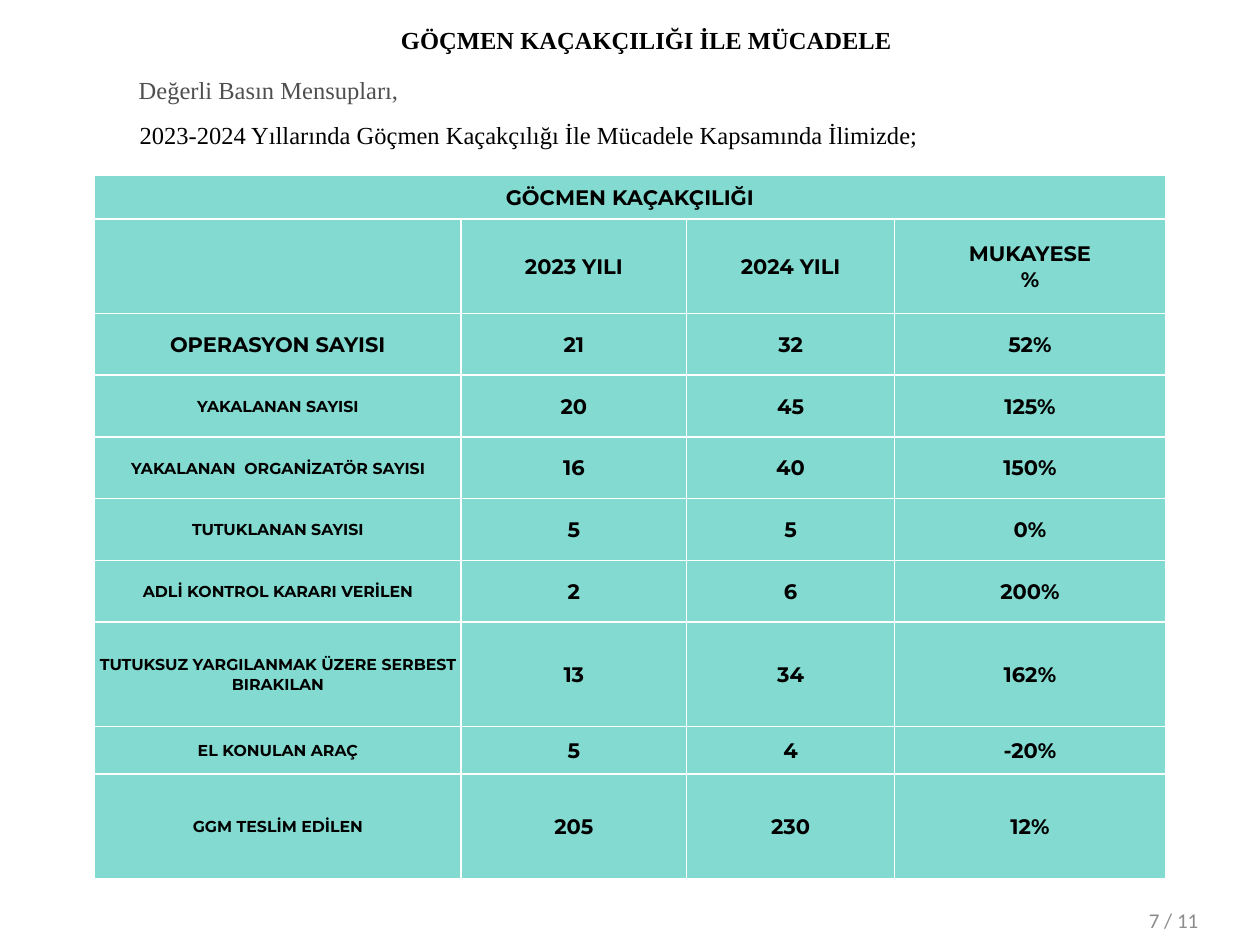
from lxml.etree import SubElement
from pptx import Presentation
from pptx.dml.color import RGBColor
from pptx.enum.text import MSO_ANCHOR, MSO_AUTO_SIZE, PP_ALIGN
from pptx.oxml.ns import qn
from pptx.util import Pt

TITLE = "GÖÇMEN KAÇAKÇILIĞI İLE MÜCADELE"
GREETING = "Değerli Basın Mensupları,"
LEAD = "2023-2024 Yıllarında Göçmen Kaçakçılığı İle Mücadele Kapsamında İlimizde;"
PAGE = "7 / 11"

ROWS = [
    ("GÖCMEN KAÇAKÇILIĞI", "", "", ""),
    ("", "2023 YILI", "2024 YILI", "MUKAYESE\n%"),
    ("OPERASYON SAYISI", "21", "32", "52%"),
    ("YAKALANAN SAYISI", "20", "45", "125%"),
    ("YAKALANAN  ORGANİZATÖR SAYISI", "16", "40", "150%"),
    ("TUTUKLANAN SAYISI", "5", "5", "0%"),
    ("ADLİ KONTROL KARARI VERİLEN", "2", "6", "200%"),
    ("TUTUKSUZ YARGILANMAK ÜZERE SERBEST BIRAKILAN", "13", "34", "162%"),
    ("EL KONULAN ARAÇ", "5", "4", "-20%"),
    ("GGM TESLİM EDİLEN", "205", "230", "12%"),
]
COL_WIDTHS = [209.5, 128.9, 118.8, 154.8]
ROW_HEIGHTS = [25, 54] + [35.3] * 5 + [59.6, 27.2, 59.6]
TABLE_LEFT, TABLE_TOP = 54, 100.1
FIRST_SMALL_LABEL_ROW = 3

THEME = {
    "serif": "Times New Roman", "table_font": "Montserrat", "page_font": "Calibri",
    "ink": "000000", "muted": "4F4F4F", "page": "8C8C8C",
    "cell": "82DAD0", "grid": "FFFFFF",
    "text_size": 14, "cell_size": 12, "label_size": 9, "page_size": 12,
}


def add_run(p, text, font, size, color, bold=False):
    r = p.add_run()
    r.text = text
    r.font.name = THEME[font]
    r.font.size = Pt(THEME[size])
    r.font.bold = bold
    r.font.color.rgb = RGBColor.from_string(THEME[color])


def place(sp, left, top, width, height):
    sp.left, sp.top, sp.width, sp.height = map(Pt, (left, top, width, height))
    tf = sp.text_frame
    tf.word_wrap = True
    tf.auto_size = MSO_AUTO_SIZE.NONE
    tf.vertical_anchor = MSO_ANCHOR.TOP
    return tf


def format_paragraph(p, align, margin, indent, after):
    p.alignment = align
    p.line_spacing = 1.07
    p.space_before = Pt(0)
    p.space_after = Pt(after)
    pPr = p._p.get_or_add_pPr()
    pPr.set("marL", str(Pt(margin)))
    pPr.set("indent", str(Pt(indent)))


def set_borders(cell):
    tcPr = cell._tc.get_or_add_tcPr()
    for i, side in enumerate(("a:lnL", "a:lnR", "a:lnT", "a:lnB")):
        ln = SubElement(tcPr, qn(side), w=str(Pt(1)))
        fill = SubElement(ln, qn("a:solidFill"))
        SubElement(fill, qn("a:srgbClr"), val=THEME["grid"])
        tcPr.insert(i, ln)


def fill_cell(cell, text, size):
    cell.fill.solid()
    cell.fill.fore_color.rgb = RGBColor.from_string(THEME["cell"])
    set_borders(cell)
    cell.vertical_anchor = MSO_ANCHOR.MIDDLE
    cell.margin_left = cell.margin_right = cell.margin_top = Pt(0.7)
    cell.margin_bottom = Pt(0)
    p = cell.text_frame.paragraphs[0]
    p.alignment = PP_ALIGN.CENTER
    for i, line in enumerate(text.split("\n") if text else []):
        if i:
            p.add_line_break()
        add_run(p, line, "table_font", size, "ink", True)


def add_heading(s):
    tf = place(s.shapes.title, 36.7, 9.4, 629.3, 28)
    p = tf.paragraphs[0]
    format_paragraph(p, PP_ALIGN.CENTER, 5, 31, 0)
    add_run(p, TITLE, "serif", "text_size", "ink", True)

    tf = place(s.shapes.add_textbox(0, 0, 0, 0), 36.7, 38.2, 629.3, 53)
    p = tf.paragraphs[0]
    format_paragraph(p, PP_ALIGN.JUSTIFY, 0, 35.5, 8)
    add_run(p, GREETING, "serif", "text_size", "muted")
    p = tf.add_paragraph()
    format_paragraph(p, PP_ALIGN.JUSTIFY, 5, 31, 0)
    add_run(p, LEAD, "serif", "text_size", "ink")


def add_statistics(s):
    frame = s.shapes.add_table(
        len(ROWS), len(COL_WIDTHS), Pt(TABLE_LEFT), Pt(TABLE_TOP),
        Pt(sum(COL_WIDTHS)), Pt(sum(ROW_HEIGHTS)))
    table = frame.table
    table.first_row = table.horz_banding = False
    for col, width in zip(table.columns, COL_WIDTHS):
        col.width = Pt(width)
    for row, height in zip(table.rows, ROW_HEIGHTS):
        row.height = Pt(height)
    for i, texts in enumerate(ROWS):
        for j, text in enumerate(texts):
            small = j == 0 and i >= FIRST_SMALL_LABEL_ROW
            fill_cell(table.cell(i, j), text, "label_size" if small else "cell_size")
    table.cell(0, 0).merge(table.cell(0, len(COL_WIDTHS) - 1))


def main():
    prs = Presentation()
    prs.slide_width, prs.slide_height = Pt(720), Pt(540)
    s = prs.slides.add_slide(prs.slide_layouts[5])
    add_heading(s)
    add_statistics(s)
    tf = place(s.shapes.add_textbox(0, 0, 0, 0), 649.4, 514.8, 70, 21.6)
    add_run(tf.paragraphs[0], PAGE, "page_font", "page_size", "page")
    prs.save("out.pptx")


if __name__ == "__main__":
    main()
